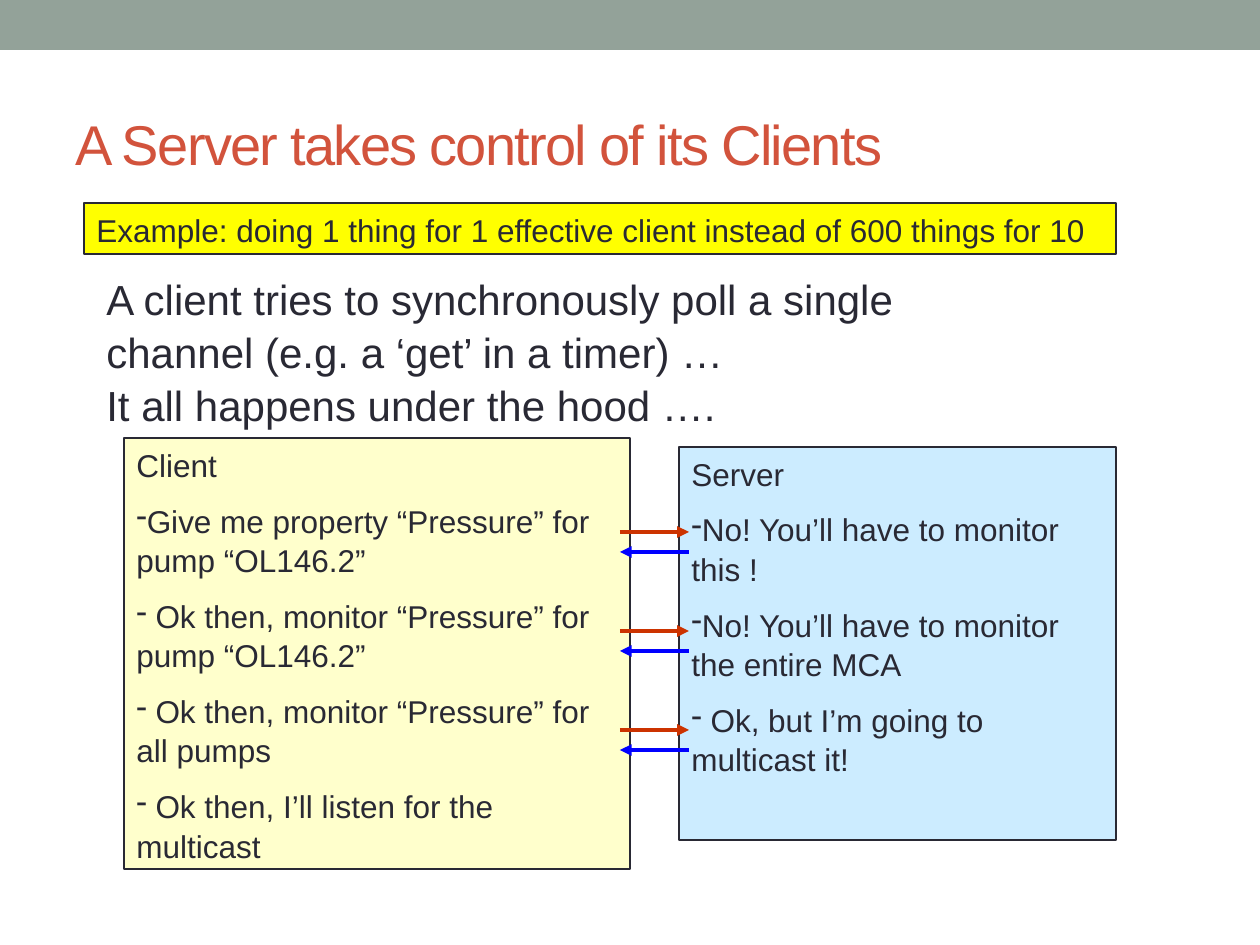
from dataclasses import dataclass

from lxml.etree import SubElement
from pptx import Presentation
from pptx.dml.color import RGBColor
from pptx.enum.shapes import MSO_CONNECTOR as CONN, MSO_SHAPE as SHAPE
from pptx.enum.text import MSO_ANCHOR as ANCHOR, PP_ALIGN as ALIGN
from pptx.oxml.ns import qn
from pptx.util import Emu, Pt

EMU_PER_PX = 914400 / 126


@dataclass(frozen=True)
class Theme:
    font: str = "Arial"
    bar: str = "93A299"
    title: str = "D2533C"
    ink: str = "292934"
    banner: str = "FFFF00"
    client: str = "FFFFCC"
    server: str = "CCECFF"
    request: str = "CC3300"
    reply: str = "0000FF"
    title_size: int = 32
    body_size: int = 24
    box_size: int = 18
    spacing: float = 1.05


THEME = Theme()


def px(*lengths):
    return [Emu(round(n * EMU_PER_PX)) for n in lengths]


def rgb(value):
    return RGBColor.from_string(value)


def set_attrs(obj, values):
    for name, value in values.items():
        setattr(obj, name, value)


def write(tf, lines, size, color=THEME.ink, bullets=False, gap=0, **formats):
    """Fill a text frame; with bullets, every line after the first gets a dash."""
    set_attrs(tf, {"word_wrap": True, "vertical_anchor": ANCHOR.TOP, **formats})
    for i, line in enumerate(lines):
        p = tf.paragraphs[0] if i == 0 else tf.add_paragraph()
        set_attrs(p, {"alignment": ALIGN.LEFT, "line_spacing": THEME.spacing,
                      "space_before": Pt(gap if i else 0)})
        if bullets and i:
            SubElement(p._p.get_or_add_pPr(), qn("a:buChar")).set("char", "-")
        r = p.add_run()
        r.text = line
        set_attrs(r.font, {"name": THEME.font, "size": Pt(size)})
        r.font.color.rgb = rgb(color)


def add_rect(s, box, fill, line=None):
    sp = s.shapes.add_shape(SHAPE.RECTANGLE, *px(*box))
    sp.shadow.inherit = False
    sp.fill.solid()
    sp.fill.fore_color.rgb = rgb(fill)
    if line:
        sp.line.color.rgb = rgb(line)
        sp.line.width = Pt(0.75)
    else:
        sp.line.fill.background()
    return sp


def add_title(s, box, text):
    sp = s.shapes.title
    set_attrs(sp, dict(zip(("left", "top", "width", "height"), px(*box))))
    write(sp.text_frame, [text], THEME.title_size, THEME.title,
          vertical_anchor=ANCHOR.MIDDLE)
    sp.text_frame.paragraphs[0].runs[0].font._element.set("spc", "-100")


def add_panel(s, box, fill, lines):
    sp = add_rect(s, box, fill, THEME.ink)
    write(sp.text_frame, lines, THEME.box_size, bullets=True,
          gap=THEME.box_size / 2)


def add_intro(s, box, lines):
    sp = s.shapes.add_textbox(*px(*box))
    write(sp.text_frame, lines, THEME.body_size)


def add_arrow(s, x1, x2, y, color):
    c = s.shapes.add_connector(CONN.STRAIGHT, *px(x1, y, x2, y))
    c.line.color.rgb = rgb(color)
    c.line.width = Pt(2.25)
    SubElement(c.line._get_or_add_ln(), qn("a:tailEnd")).set("type", "triangle")
    SubElement(c._element.spPr, qn("a:effectLst"))


def add_exchanges(s, box, count, step):
    """Request and reply arrows on the top and bottom edge of each repeat of the box."""
    left, top, width, height = box
    right = left + width
    for i in range(count):
        y = top + i * step
        add_arrow(s, left, right, y, THEME.request)
        add_arrow(s, right, left, y + height, THEME.reply)


def main():
    prs = Presentation()
    prs.slide_width, prs.slide_height = px(1260, 945)
    s = prs.slides.add_slide(prs.slide_layouts[5])

    add_rect(s, (0, 0, 1260, 50), THEME.bar)
    add_title(s, (63, 73, 1134, 136), "A Server takes control of its Clients")
    add_panel(s, (124, 438, 506, 431), THEME.client, [
        "Client",
        "Give me property “Pressure” for pump “OL146.2”",
        " Ok then, monitor “Pressure” for pump “OL146.2”",
        " Ok then, monitor “Pressure” for all pumps",
        " Ok then, I’ll listen for the multicast",
    ])
    add_panel(s, (679, 447, 437, 393), THEME.server, [
        "Server",
        "No! You’ll have to monitor this !",
        "No! You’ll have to monitor the entire MCA",
        " Ok, but I’m going to multicast it!",
    ])
    add_exchanges(s, (620, 532, 69, 20), count=3, step=99)
    add_panel(s, (84, 203, 1032, 51), THEME.banner, [
        "Example: doing 1 thing for 1 effective client instead of 600 things for 10",
    ])
    add_intro(s, (94, 265, 942, 165), [
        "A client tries to synchronously poll a single channel "
        "(e.g. a ‘get’ in a timer) …",
        "It all happens under the hood ….",
    ])
    prs.save("out.pptx")


if __name__ == "__main__":
    main()
